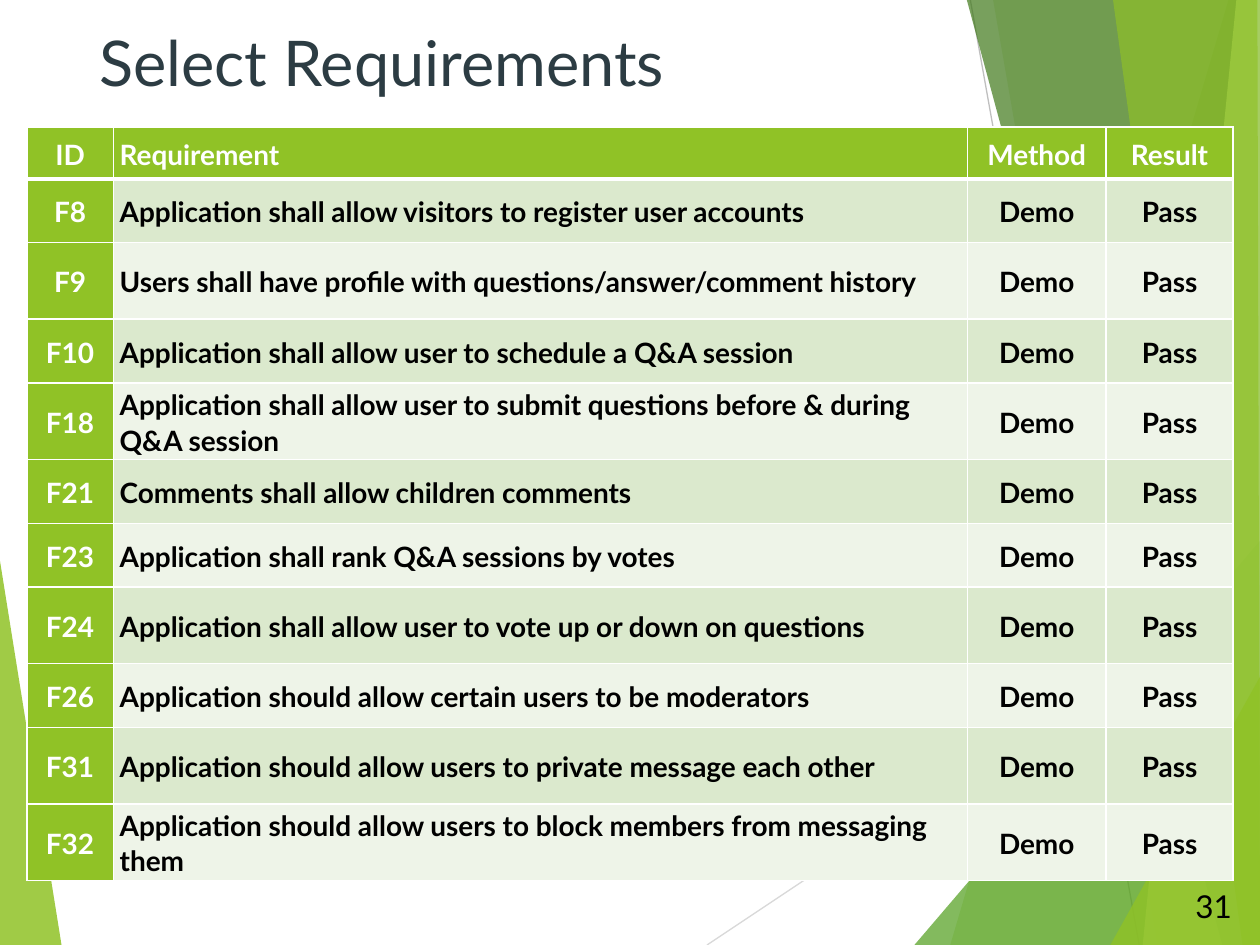
from dataclasses import dataclass

from pptx import Presentation
from pptx.dml.color import RGBColor as RGB
from pptx.enum.shapes import MSO_CONNECTOR as LINK
from pptx.enum.text import MSO_ANCHOR as ANCHOR, PP_ALIGN as ALIGN
from pptx.oxml.ns import qn
from pptx.slide import Slide
from pptx.util import Pt
from lxml.etree import SubElement as Sub

LIME = RGB(0x90, 0xC2, 0x26)
GREEN = RGB(0x54, 0xA0, 0x21)
FOREST = RGB(0x3F, 0x78, 0x19)
PALE = RGB(0xC0, 0xE4, 0x74)
SILVER = RGB(0xD9, 0xD9, 0xD9)
GRAY = RGB(0xBF, 0xBF, 0xBF)
SLATE = RGB(0x2C, 0x3C, 0x43)
BLACK = RGB(0, 0, 0)
WHITE = RGB(0xFF, 0xFF, 0xFF)
BANDS = RGB(0xDB, 0xE9, 0xCD), RGB(0xEE, 0xF4, 0xE8)

WIDTH, HEIGHT = 720, 540
HEAD, SHORT, TALL = 29.5, 36.5, 43.7
COLUMNS = 49.5, 488, 79.3, 72.5

LINES = [
    ((404, 540), (720.5, 329), SILVER),
    ((554.5, 0), (651, 540), GRAY),
]
FACETS = [
    ([(702, 0), (543, 540), (721, 540), (721, 0)], LIME, 30),
    ([(567.5, 0), (661.5, 540), (721, 540), (721, 0)], LIME, 20),
    ([(522.5, 540), (720, 309), (721, 540)], GREEN, 72),
    ([(552.5, 0), (698.5, 540), (721, 540), (721, 0)], FOREST, 70),
    ([(706.5, 0), (653, 540), (721, 540), (720, 0)], PALE, 70),
    ([(636, 0), (710, 540), (720, 540), (718.5, 0)], LIME, 65),
    ([(634.5, 540), (721, 385), (721, 540)], LIME, 80),
]
NEEDS = [
    ("F8", "Application shall allow visitors to register user accounts", SHORT),
    ("F9", "Users shall have profile with questions/answer/comment history", TALL),
    ("F10", "Application shall allow user to schedule a Q&A session", SHORT),
    ("F18", "Application shall allow user to submit questions before & during Q&A session", TALL),
    ("F21", "Comments shall allow children comments", SHORT),
    ("F23", "Application shall rank Q&A sessions by votes", SHORT),
    ("F24", "Application shall allow user to vote up or down on questions", TALL),
    ("F26", "Application should allow certain users to be moderators", SHORT),
    ("F31", "Application should allow users to private message each other", TALL),
    ("F32", "Application should allow users to block members from messaging them", TALL),
]


@dataclass
class Board:
    """Draws styled elements on one slide, with lengths in points."""

    slide: Slide
    face: str = "Lato"

    def facet(self, points, color, alpha):
        start, *rest = [(Pt(x), Pt(y)) for x, y in points]
        pen = self.slide.shapes.build_freeform(*start)
        pen.add_line_segments(rest)
        shape = pen.convert_to_shape()
        shape.shadow.inherit = False
        shape.fill.solid()
        shape.fill.fore_color.rgb = color
        shape.line.fill.background()
        tint = next(shape._element.iter(qn("a:srgbClr")))
        Sub(tint, qn("a:alpha"), val=str(alpha * 1000))

    def line(self, start, end, color):
        ends = [Pt(v) for v in (*start, *end)]
        link = self.slide.shapes.add_connector(LINK.STRAIGHT, *ends)
        link.line.color.rgb = color
        link.line.width = Pt(0.75)
        Sub(link._element.spPr, qn("a:effectLst"))

    def label(self, frame, text, size, color, bold=False, align=ALIGN.LEFT):
        frame.word_wrap = True
        frame.text = text
        para = frame.paragraphs[0]
        para.alignment = align
        font = para.runs[0].font
        font.name, font.size, font.bold = self.face, Pt(size), bold
        font.color.rgb = color
        return para

    def text(self, box, text, size, color, align=ALIGN.LEFT, anchor=ANCHOR.TOP):
        frame = self.slide.shapes.add_textbox(*map(Pt, box)).text_frame
        frame.vertical_anchor = anchor
        self.label(frame, text, size, color, align=align)

    def edge(self, cell, side, width):
        line = Sub(cell._tc.get_or_add_tcPr(), qn(f"a:ln{side}"), w=str(Pt(width)))
        Sub(Sub(line, qn("a:solidFill")), qn("a:srgbClr"), val=str(WHITE))

    def cell(self, cell, text, fill, color, align, top, base):
        cell.margin_left = cell.margin_right = Pt(3.6)
        cell.margin_top = cell.margin_bottom = 0
        cell.vertical_anchor = ANCHOR.MIDDLE
        for side, width in zip("LRTB", (1, 1, top, base)):
            self.edge(cell, side, width)
        cell.fill.solid()
        cell.fill.fore_color.rgb = fill
        para = self.label(cell.text_frame, text, 16, color, True, align)
        para.line_spacing = 1.07

    def table(self, left, top, widths, heights, rows):
        size = len(rows), len(widths)
        box = left, top, sum(widths), sum(heights)
        grid = self.slide.shapes.add_table(*size, *map(Pt, box)).table
        for column, width in zip(grid.columns, widths):
            column.width = Pt(width)
        for row, height in zip(grid.rows, heights):
            row.height = Pt(height)
        for r, row in enumerate(rows):
            for c, text in enumerate(row):
                key = r == 0 or c == 0
                fill = LIME if key else BANDS[(r - 1) % 2]
                color = WHITE if key else BLACK
                align = ALIGN.LEFT if c == 1 else ALIGN.CENTER
                rule = 3 if r == 1 else 1, 3 if r == 0 else 1
                self.cell(grid.cell(r, c), text, fill, color, align, *rule)


def main():
    deck = Presentation()
    deck.slide_width, deck.slide_height = Pt(WIDTH), Pt(HEIGHT)
    board = Board(deck.slides.add_slide(deck.slide_layouts[6]))
    board.facet([(-0.7, 316), (35.3, 540.7), (-0.7, 540)], LIME, 85)
    for line in LINES:
        board.line(*line)
    for facet in FACETS:
        board.facet(*facet)
    board.text((49.7, 10, 500, 62.6), "Select Requirements", 36, SLATE)
    rows = [("ID", "Requirement", "Method", "Result")]
    rows += [(key, need, "Demo", "Pass") for key, need, _ in NEEDS]
    heights = [HEAD] + [height for *_, height in NEEDS]
    board.table(15.3, 72.7, COLUMNS, heights, rows)
    board.text((671, 503.5, 40, 28.8), "31", 18, BLACK, ALIGN.RIGHT, ANCHOR.MIDDLE)
    deck.save("out.pptx")


if __name__ == "__main__":
    main()
